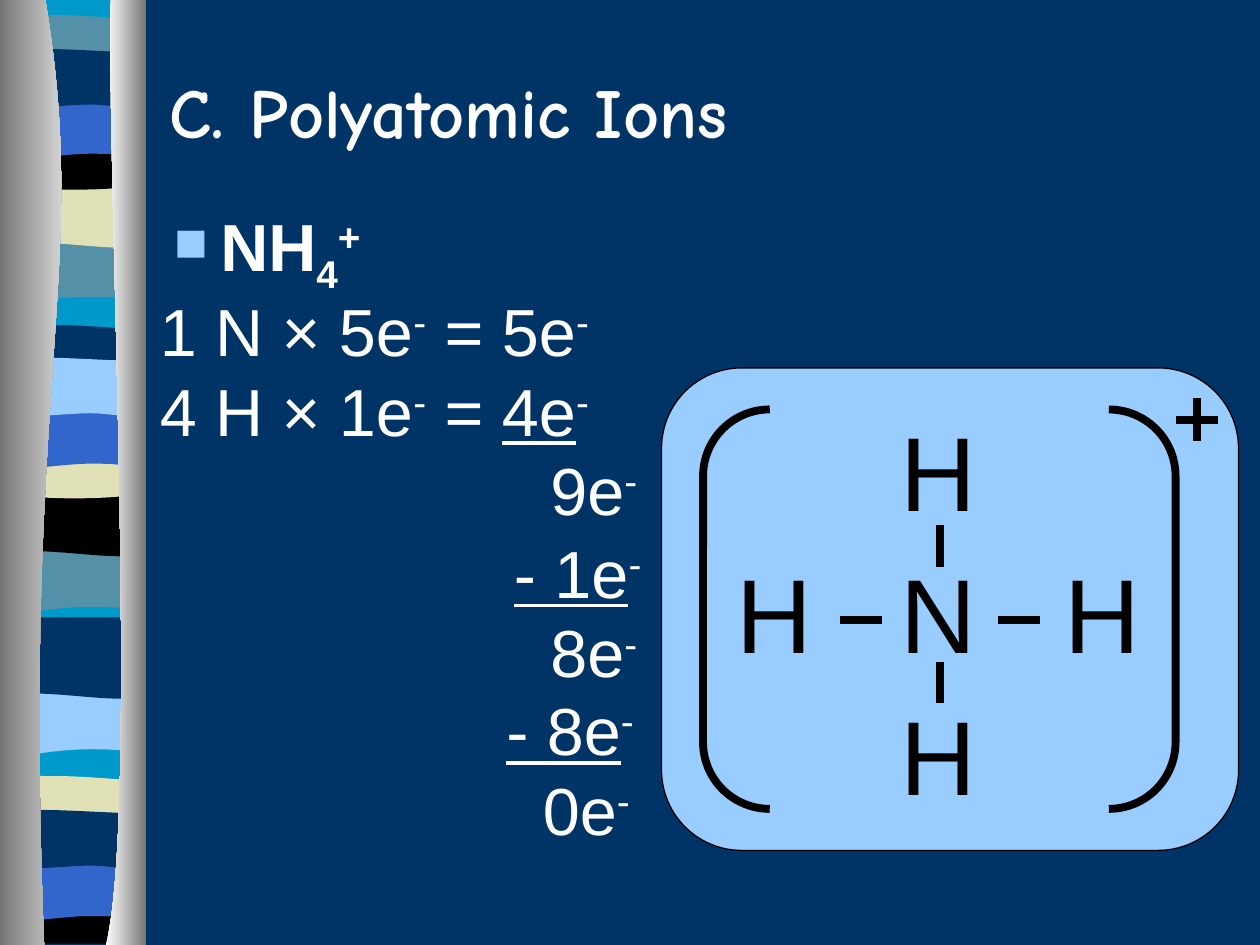
from lxml import etree
from pptx import Presentation
from pptx.dml.color import RGBColor as RGB
from pptx.enum.shapes import MSO_CONNECTOR as Link, MSO_SHAPE as Kind
from pptx.enum.text import MSO_ANCHOR as Anchor
from pptx.oxml.ns import qn
from pptx.util import Inches, Pt

NAVY = RGB(0x00, 0x33, 0x66)
SKY = RGB(0x99, 0xCC, 0xFF)
CYAN = RGB(0x00, 0x99, 0xCC)
TEAL = RGB(0x54, 0x90, 0xA8)
SAND = RGB(0xE1, 0xE1, 0xB7)
BLUE = RGB(0x33, 0x66, 0xCC)
GREY = RGB(0x76, 0x76, 0x76)
BLACK = RGB(0, 0, 0)
WHITE = RGB(0xFF, 0xFF, 0xFF)

SWAY = [(1.08, -.05), (1.08, .53), (.34, .45, .19, .61, 0, .53), (0, -.05)]
ROLL = [(1.08, -.09), (1.08, .53), (.9, .61, .33, .47, 0, .53), (0, -.09)]
BOWL = [(1.08, -.05), (1.08, .3), (.9, .34, .19, .34, 0, .3), (0, -.05),
        (.07, -.1, .24, -.09, .42, -.09), (.6, -.09, .95, -.06, 1.08, -.05)]
DIP = [(1.08, -.05), (1.08, .38), (.9, .44, .19, .44, 0, .38), (0, -.05),
       (.66, 0, .85, -.05, 1.08, -.05)]
BASE = [(1.08, 0), (1.08, .37), (0, .37), (0, 0), (.66, .05, .85, 0, 1.08, 0)]
ARCH = [(1.08, -.05), (1.08, .53), (.91, .48, .84, .48, .66, .48),
        (.48, .48, .16, .53, 0, .53), (0, -.05)]
FLAG = [(1.08, -.05), (1.08, .37), (1.01, .42, .84, .37, .66, .37),
        (.48, .37, .11, .42, 0, .37), (0, -.05), (.15, -.1, .73, -.05, .91, -.05)]
SHEET = [(1.08, 0), (1.08, 7.47), (0, 7.47), (0, 0)]
BANDS = [
    (SHEET, 0, CYAN), (SWAY, 1.85, TEAL), (ROLL, 1.41, SAND),
    (BOWL, .21, TEAL), (DIP, 1.08, BLACK), (ARCH, .74, BLUE),
    (FLAG, .46, NAVY), (SWAY, 4.31, TEAL), (ROLL, 3.86, BLACK),
    (BOWL, 2.67, NAVY), (DIP, 3.53, SAND), (ARCH, 3.2, BLUE),
    (FLAG, 2.91, SKY), (SWAY, 5.44, SKY), (ROLL, 4.99, NAVY),
    (BOWL, 6.25, SAND), (BASE, 7.12, BLACK), (ARCH, 6.79, BLUE),
    (FLAG, 6.5, NAVY)]
LEFT = [(.36, 0), (.72, 2.16, .17, 2.96, .35, 7.5), (0, 7.5), (0, 0)]
RIGHT = [(.04, 0), (0, 1.25, .27, 6.46, 0, 7.5), (.32, 7.5), (.32, 0)]


def add_free(slide, path, x, y):
    """Add an outline of lines and cubic curves at the given corner."""
    spots = [(Inches(x + part[i]), Inches(y + part[i + 1]))
             for part in path for i in range(0, len(part), 2)]
    pen = slide.shapes.build_freeform(*spots[0])
    pen.add_line_segments(spots[1:], close=True)
    shape = pen.convert_to_shape()
    legs = iter(list(shape._element.iter(qn("a:lnTo"))))
    for part in path[1:]:
        leg = next(legs)
        if len(part) == 6:
            leg.addprevious(curve := etree.Element(qn("a:cubicBezTo")))
            for each in (leg, next(legs), next(legs)):
                curve.append(each[0])
                each.getparent().remove(each)
    shape.shadow.inherit = False
    shape.line.fill.background()
    return shape


def add_strip(slide, x, y):
    """Draw the wavy bands between two shaded pillars."""
    for path, top, tint in BANDS:
        fill = add_free(slide, path, x + .05, y + top).fill
        fill.solid()
        fill.fore_color.rgb = tint
    for path, shift, tints in ((LEFT, 0, (GREY, WHITE)), (RIGHT, .84, (WHITE, GREY))):
        fill = add_free(slide, path, x + shift, y).fill
        fill.gradient()
        fill.gradient_angle = 0
        for stop, tint in zip(fill.gradient_stops, tints):
            stop.color.rgb = tint


def add_box(slide, x, y, w, h):
    """Add a wrapping text box and return its frame."""
    frame = slide.shapes.add_textbox(*map(Inches, (x, y, w, h))).text_frame
    frame.word_wrap = True
    return frame


def set_font(para, size, tint, name="Arial", bold=False):
    """Set the font of a paragraph."""
    font = para.font
    font.size, font.name, font.bold = Pt(size), name, bold
    font.color.rgb = tint


def add_runs(para, parts):
    """Fill a paragraph with plain, raised, lowered or underlined runs."""
    for text, style in parts:
        run = para.add_run()
        run.text = text
        if style == "line":
            run.font.underline = True
        elif style:
            shift = {"up": "30000", "down": "-25000"}[style]
            run._r.get_or_add_rPr().set("baseline", shift)


def add_title(slide, x, y, w, h):
    """Write the title."""
    frame = add_box(slide, x, y, w, h)
    frame.vertical_anchor = Anchor.MIDDLE
    para = frame.paragraphs[0]
    para.text = "C. Polyatomic Ions"
    set_font(para, 40, WHITE, "Comic Neue", True)


def add_ion(slide, x, y, w, h):
    """Write the formula of the ion as a bullet."""
    para = add_box(slide, x, y, w, h).paragraphs[0]
    add_runs(para, [("NH", ""), ("4", "down"), ("+", "up")])
    set_font(para, 38, WHITE, bold=True)
    props = para._p.get_or_add_pPr()
    props.set("marL", str(Inches(.37)))
    props.set("indent", str(-Inches(.37)))
    tint = etree.Element(qn("a:buClr"))
    etree.SubElement(tint, qn("a:srgbClr"), val=str(SKY))
    size = etree.Element(qn("a:buSzPct"), val="70000")
    face = etree.Element(qn("a:buFont"), typeface="Wingdings", charset="2")
    mark = etree.Element(qn("a:buChar"), char="n")
    for i, node in enumerate((tint, size, face, mark)):
        props.insert(i, node)


def add_sums(slide, x, y, w, h, rows):
    """Write rows of the electron count, each with its own indent."""
    frame = add_box(slide, x, y, w, h)
    for i, (left, parts) in enumerate(rows):
        para = frame.add_paragraph() if i else frame.paragraphs[0]
        add_runs(para, parts + [("-", "up")])
        set_font(para, 38, WHITE)
        para._p.get_or_add_pPr().set("marL", str(Inches(left)))


def add_line(slide, *ends):
    """Draw a thick black line."""
    link = slide.shapes.add_connector(Link.STRAIGHT, *map(Inches, ends))
    link.line.color.rgb, link.line.width = BLACK, Pt(4.5)
    etree.SubElement(link._element.spPr, qn("a:effectLst"))


def add_atoms(slide, x, y, w, h):
    """Write the atoms in three rows on centred tab stops."""
    frame = add_box(slide, x, y, w, h)
    for i, text in enumerate(("\t\tH", "\tH\tN\tH", "\t\tH")):
        para = frame.add_paragraph() if i else frame.paragraphs[0]
        para.text, para.space_before = text, Pt(9)
        set_font(para, 60, BLACK)
        stops = etree.Element(qn("a:tabLst"))
        for n in (1, 2, 3):
            etree.SubElement(stops, qn("a:tab"), pos=str(Inches(1.3 * n)), algn="ctr")
        para._p.pPr.find(qn("a:defRPr")).addprevious(stops)


def add_cell(slide, x, y, w, h):
    """Draw the structure of the ion in brackets on a panel."""
    panel = slide.shapes.add_shape(Kind.FLOWCHART_ALTERNATE_PROCESS,
                                   *map(Inches, (x, y, w, h)))
    panel.fill.solid()
    panel.fill.fore_color.rgb = SKY
    clasp = slide.shapes.add_shape(
        Kind.DOUBLE_BRACKET, *map(Inches, (x + .33, y + .33, w - .83, h - .66)))
    clasp.adjustments[0] = .167
    clasp.fill.background()
    for shape, width in ((panel, .75), (clasp, 4.5)):
        shape.shadow.inherit = False
        shape.line.color.rgb, shape.line.width = BLACK, Pt(width)
    add_atoms(slide, x - .5, y + .26, 5.42, 3.3)
    mid, row = x + 2.21, y + 2
    for near, far in ((-.79, -.46), (.46, .79)):
        add_line(slide, mid + near, row, mid + far, row)
    for near, far in ((-.75, -.42), (.33, .66)):
        add_line(slide, mid, row + near, mid, row + far)
    px, py = x + 4.25, y + .41
    add_line(slide, px - .17, py, px + .17, py)
    add_line(slide, px, py - .17, px, py + .17)


def main():
    """Build the slide and save it."""
    deck = Presentation()
    deck.slide_width, deck.slide_height = Inches(10), Inches(7.5)
    slide = deck.slides.add_slide(deck.slide_layouts[6])
    slide.background.fill.solid()
    slide.background.fill.fore_color.rgb = NAVY
    add_strip(slide, 0, 0)
    add_cell(slide, 5.25, 2.92, 4.58, 3.83)
    add_ion(slide, 1.28, 1.58, 8.5, .92)
    add_sums(slide, 1.17, 2.25, 8.5, .92, [
        (0, [("1 N × 5e", ""), ("-", "up"), (" = 5e", "")]),
        (0, [("4 H × 1e", ""), ("-", "up"), (" = ", ""), ("4e", "line")]),
        (3.1, [("9e", "")])])
    add_sums(slide, 1.17, 4.17, 8.5, .92,
             [(2.81, [("- 1e", "line")]), (3.1, [("8e", "")])])
    add_sums(slide, 1.25, 5.42, 8.5, .92,
             [(2.67, [("- 8e", "line")]), (2.96, [("0e", "")])])
    add_title(slide, 1.25, .25, 8.75, 1.25)
    deck.save("out.pptx")


if __name__ == "__main__":
    main()
